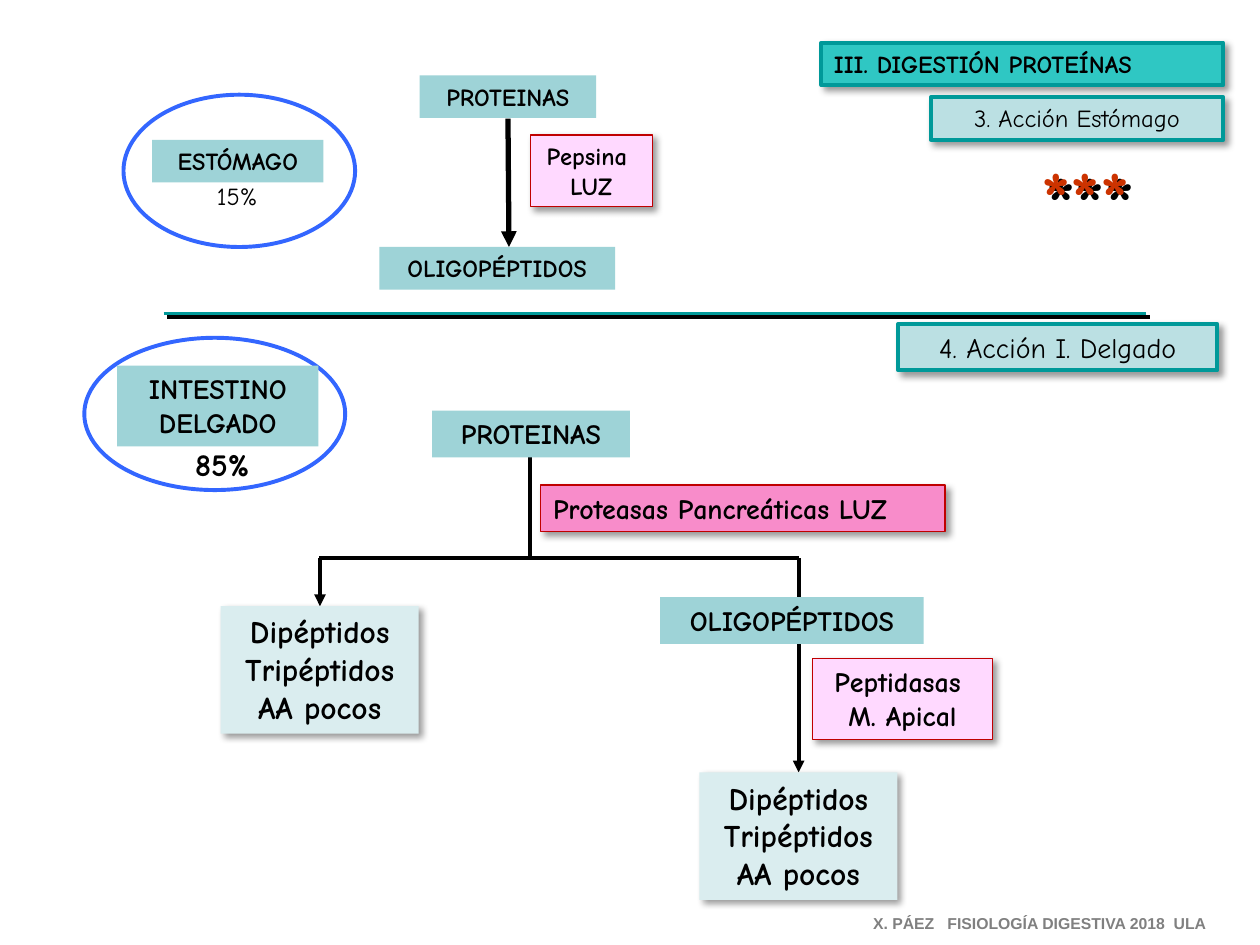
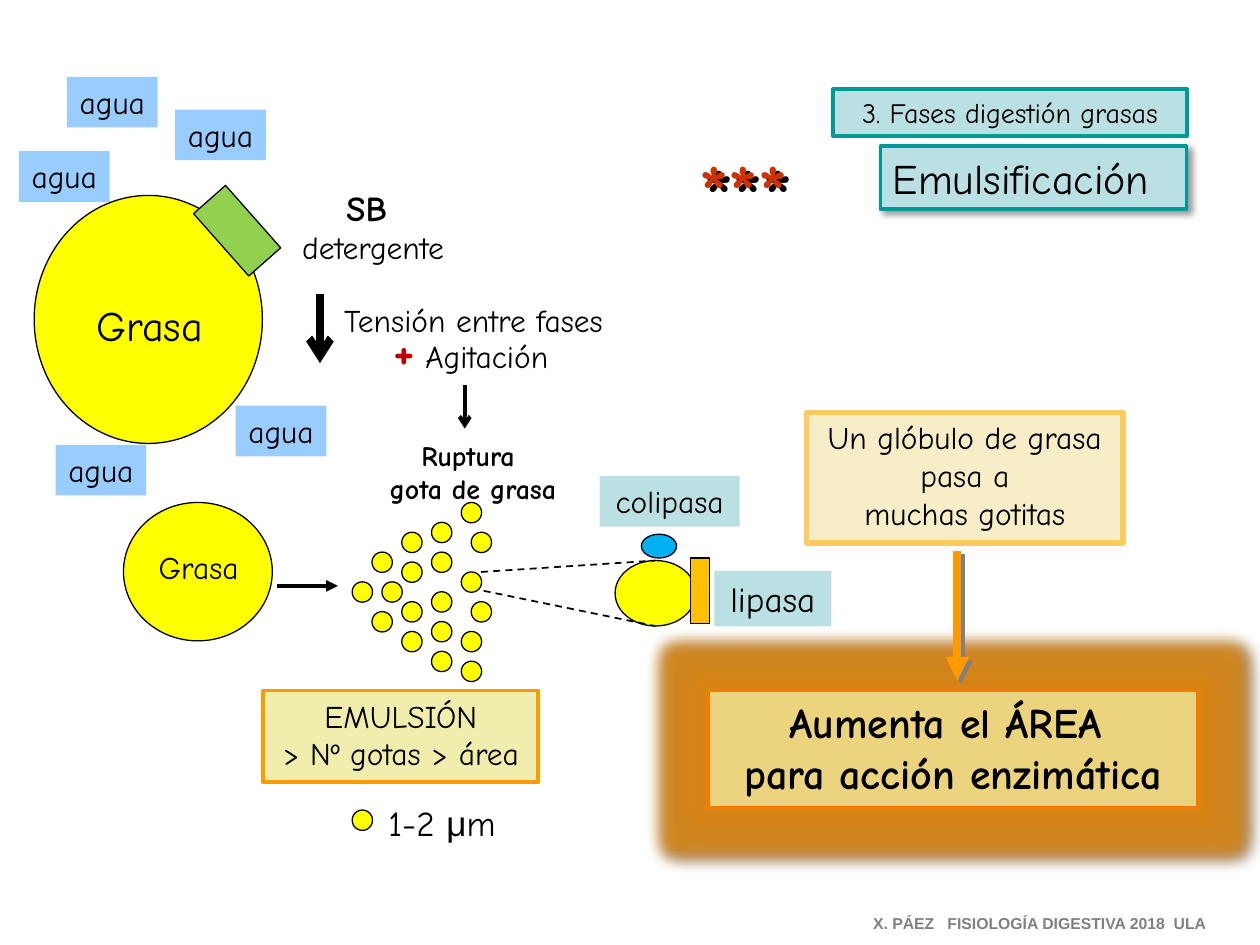
from pptx import Presentation
from pptx.dml.color import RGBColor
from pptx.enum.dml import MSO_LINE
from pptx.enum.shapes import MSO_CONNECTOR, MSO_SHAPE
from pptx.enum.text import MSO_AUTO_SIZE, PP_ALIGN
from pptx.oxml import parse_xml
from pptx.oxml.ns import nsdecls, qn
from pptx.util import Cm, Pt

ELLIPSE, RECT = MSO_SHAPE.OVAL, MSO_SHAPE.RECTANGLE
STRAIGHT, DASH = MSO_CONNECTOR.STRAIGHT, MSO_LINE.DASH
LEFT, CENTER = PP_ALIGN.LEFT, PP_ALIGN.CENTER
FIT = MSO_AUTO_SIZE.SHAPE_TO_FIT_TEXT

FONT = "Comic Neue"
BLACK, RED, STAR_RED = "000000", "C00000", "CC3300"
TEAL, TEAL_DARK, TEAL_PALE, TEAL_LIGHT = "9ED3D7", "009999", "BBE0E3", "DAEDEF"
PINK, PINK_STRONG, BLUE = "FFD9FF", "F88CCA", "3366FF"
YELLOW, ORANGE, WATER = "FFFF00", "FF9900", "99CCFF"

SHADOW = ('<a:outerShdw {ns} blurRad="{blur}" dist="{dist}" dir="2700000" algn="tl" '
          'rotWithShape="0"><a:srgbClr val="{color}"><a:alpha val="{alpha}"/>'
          '</a:srgbClr></a:outerShdw>')
NS = nsdecls("a")
SOFT = SHADOW.format(ns=NS, blur=50800, dist=38100, color=BLACK, alpha=40000)
HARD = SHADOW.format(ns=NS, blur=0, dist=35560, color=BLACK, alpha=100000)
GRAY = SHADOW.format(ns=NS, blur=0, dist=35560, color="808080", alpha=100000)
STAR_SHADOW = SHADOW.format(ns=NS, blur=0, dist=50800, color=BLACK, alpha=100000)
GLOW = (f'<a:glow {NS} rad="228600"><a:srgbClr val="D88414">'
        '<a:alpha val="90000"/></a:srgbClr></a:glow>')

rgb = RGBColor.from_string


def draw(slide, at, text="", size=18, bold=False, color=BLACK, font=FONT, align=CENTER,
         wrap=False, kind=RECT, fill=None, line=None, width=0.75, effects=()):
    place = [Cm(length) for length in at]
    if text:
        item = slide.shapes.add_textbox(*place)
    else:
        item = slide.shapes.add_shape(kind, *place)
    if fill:
        item.fill.solid()
        item.fill.fore_color.rgb = rgb(fill)
    else:
        item.fill.background()
    if line:
        item.line.color.rgb = rgb(line)
        item.line.width = Pt(width)
    else:
        item.line.fill.background()
    item.shadow.inherit = False
    for effect in effects:
        item._element.spPr.find(qn("a:effectLst")).append(parse_xml(effect))
    if text:
        frame = item.text_frame
        frame.text = text
        frame.word_wrap = wrap
        frame.auto_size = FIT
        for paragraph in frame.paragraphs:
            first, *rest = paragraph.text.split("|")
            paragraph.text = first
            for piece in rest:
                paragraph.add_run().text = piece
            paragraph.alignment = align
            for run in paragraph.runs:
                run.font.name = font
                run.font.size = Pt(size)
                run.font.bold = bold
                run.font.color.rgb = rgb(color)
    return item


def connect(slide, x1, y1, x2, y2, width=2.25, color=BLACK, head=None, dash=None, effect=None):
    link = slide.shapes.add_connector(STRAIGHT, Cm(x1), Cm(y1), Cm(x2), Cm(y2))
    link.line.color.rgb = rgb(color)
    link.line.width = Pt(width)
    if dash:
        link.line.dash_style = dash
    properties = link._element.spPr
    if head:
        properties.find(qn("a:ln")).append(parse_xml(f'<a:tailEnd {NS} type="{head}"/>'))
    shade = parse_xml(f"<a:effectLst {NS}/>")
    if effect:
        shade.append(parse_xml(effect))
    properties.append(shade)


prs = Presentation()
prs.slide_width, prs.slide_height = Cm(25.4), Cm(19.05)
proteins = prs.slides.add_slide(prs.slide_layouts[6])
fats = prs.slides.add_slide(prs.slide_layouts[6])

heading = dict(line=TEAL_DARK, width=2.25)
stars = dict(text="***", size=44, bold=True, color=STAR_RED, effects=[STAR_SHADOW])
for slide in (proteins, fats):
    draw(slide, (17.35, 18.29, 7.37, 0.64), "X. PÁEZ   FISIOLOGÍA DIGESTIVA 2018  ULA",
         9, True, "808080", "Arial", LEFT)

draw(proteins, (16.56, 0.86, 8.1, 0.86), "III. DIGESTIÓN PROTEÍNAS", 14, True, align=LEFT,
     wrap=True, fill="2FC7C3", effects=[SOFT], **heading)
for at, text, size in [
    ((18.77, 1.96, 5.89, 0.86), "3. Acción Estómago", 14),
    ((18.11, 6.53, 6.43, 0.94), "4. Acción I. Delgado", 16),
]:
    draw(proteins, at, text, size, wrap=True, fill=TEAL_PALE, effects=[SOFT], **heading)
draw(proteins, (20.17, 2.9, 3.43, 2.13), wrap=True, **stars)
connect(proteins, 3.3, 6.32, 23.11, 6.32, color=TEAL_DARK, effect=HARD)

for organ in [(2.49, 1.91, 4.67, 3.07), (1.7, 6.81, 5.26, 3.07)]:
    draw(proteins, organ, kind=ELLIPSE, line=BLUE, width=2.25)
draw(proteins, (4.06, 3.53, 1.45, 0.86), "15%", 14)
draw(proteins, (3.58, 8.84, 1.8, 1.02), "85%", 18, True)

connect(proteins, 10.24, 2.39, 10.26, 4.98, 3, head="triangle")
connect(proteins, 10.69, 9.22, 10.69, 11.25)
connect(proteins, 6.43, 11.25, 16.1, 11.25)
connect(proteins, 6.45, 11.25, 6.45, 12.22, head="triangle")
connect(proteins, 16.1, 11.25, 16.1, 15.57, head="triangle")

for at, text, size in [
    ((3.07, 2.82, 3.45, 0.86), "ESTÓMAGO", 14),
    ((8.46, 1.52, 3.56, 0.86), "PROTEINAS", 14),
    ((7.65, 4.98, 4.75, 0.86), "OLIGOPÉPTIDOS", 14),
    ((2.36, 7.37, 4.06, 1.63), "INTESTINO\nDELGADO", 16),
    ((8.71, 8.28, 3.99, 0.94), "PROTEINAS", 16),
    ((13.31, 12.04, 5.31, 0.94), "OLIGOPÉPTIDOS", 16),
]:
    draw(proteins, at, text, size, True, fill=TEAL)

for at, text, size, fill, align in [
    ((10.69, 2.72, 2.46, 1.45), "Pepsina \nLUZ", 14, PINK, CENTER),
    ((10.9, 9.78, 8.15, 0.94), "Proteasas Pancreáticas LUZ", 16, PINK_STRONG, LEFT),
    ((16.38, 13.28, 3.63, 1.63), "Peptidasas \nM. Apical", 16, PINK, CENTER),
]:
    draw(proteins, at, text, size, True, align=align, fill=fill, line=RED, effects=[SOFT])

for left, top in [(4.45, 12.22), (14.1, 15.57)]:
    draw(proteins, (left, top, 3.99, 2.57), "Dipéptidos\nTripéptidos\nAA pocos", 18, True,
         fill=TEAL_LIGHT, effects=[SOFT])

draw(fats, (16.79, 1.8, 7.14, 0.94), "3. Fases digestión grasas", 16, fill=TEAL_PALE, **heading)
draw(fats, (17.75, 2.95, 6.17, 1.27), "Emulsificación", 24, align=LEFT, fill=TEAL_PALE,
     effects=[SOFT], **heading)
draw(fats, (13.49, 2.74, 3, 2.13), **stars)

fat = dict(kind=ELLIPSE, fill=YELLOW, line=BLACK)
for globule, label, size in [
    ((0.69, 3.94, 4.6, 5), (1.63, 5.92, 2.77, 1.27), 24),
    ((2.49, 10.13, 3, 2.79), (2.9, 10.92, 2.21, 1.02), 18),
]:
    draw(fats, globule, **fat)
    draw(fats, label, "Grasa", size)
for left, top in [(1.35, 1.55), (3.53, 2.21), (0.38, 3.05), (4.75, 8.18), (1.12, 8.97)]:
    draw(fats, (left, top, 1.83, 1.02), "agua", fill=WATER)
bile_salt = draw(fats, (3.94, 4.22, 1.68, 0.86), fill="92D050", line=BLACK)
bile_salt.rotation = 228.5

detergent = draw(fats, (5.59, 3.63, 3.86, 1.88), "SB \ndetergente", wrap=True)
bile_name = detergent.text_frame.paragraphs[0].runs[0].font
bile_name.size, bile_name.bold = Pt(20), True
draw(fats, (6.32, 5.94, 6.45, 1.02), "Tensión entre fases")
shaking = draw(fats, (7.24, 6.32, 4.29, 1.45), " |+| Agitación")
plus = shaking.text_frame.paragraphs[0].runs[1].font
plus.size, plus.bold, plus.color.rgb = Pt(28), True, rgb(RED)
draw(fats, (7.39, 8.71, 4.29, 1.63), "Ruptura \ngota de grasa", 16, True)

connect(fats, 6.45, 5.92, 6.45, 7.32, 4.5, head="arrow")
connect(fats, 9.37, 7.77, 9.37, 8.64, head="arrow")
connect(fats, 5.59, 11.81, 6.81, 11.81, head="triangle")

droplet_rows = {7.1: [8], 7.5: [5, 11], 7.7: [8], 8.1: [3, 6, 10, 13],
                8.7: [2, 5, 9, 12, 15], 9.3: [0, 7, 13, 16], 9.5: [3, 10]}
for left, rows in droplet_rows.items():
    for row in rows:
        draw(fats, (left, 10.13 + 0.2 * row, 0.41, 0.41), **fat)
draw(fats, (7.1, 16.33, 0.41, 0.41), **fat)
diameter = draw(fats, (7.54, 16.03, 2.74, 1.12), "1-2 |μ|m", 20)
diameter.text_frame.paragraphs[0].runs[1].font.name = "Arial"
draw(fats, (5.31, 13.92, 5.54, 1.85), "EMULSIÓN\n> Nº gotas > área",
     fill="F1EEAD", line=ORANGE, width=2.25)

draw(fats, (12.09, 9.6, 2.82, 1.02), "colipasa", fill=TEAL_PALE)
draw(fats, (14.4, 11.51, 2.36, 1.12), "lipasa", 20, fill=TEAL_PALE)
draw(fats, (12.4, 11.3, 1.63, 1.32), **fat)
draw(fats, (12.93, 10.77, 0.71, 0.48), kind=ELLIPSE, fill="00B0F0", line=BLACK)
draw(fats, (13.92, 11.25, 0.38, 1.32), fill="FFC000", line=BLACK)
connect(fats, 9.7, 11.53, 13.21, 11.3, 1, dash=DASH)
connect(fats, 9.75, 11.91, 13.21, 12.62, 1, dash=DASH)

draw(fats, (16.26, 8.31, 6.38, 2.64), "Un glóbulo de grasa\npasa a\nmuchas gotitas",
     fill="F7EDC7", line="FFCA5F", width=3)
draw(fats, (14.27, 13.92, 9.88, 2.36), "Aumenta el ÁREA \npara acción enzimática", 24, True,
     fill="ECD47E", line="F47A00", width=2.25, effects=[GLOW, GRAY])
connect(fats, 19.3, 11.1, 19.3, 13.72, 4.5, ORANGE, head="triangle", effect=GRAY)

prs.save("out.pptx")
